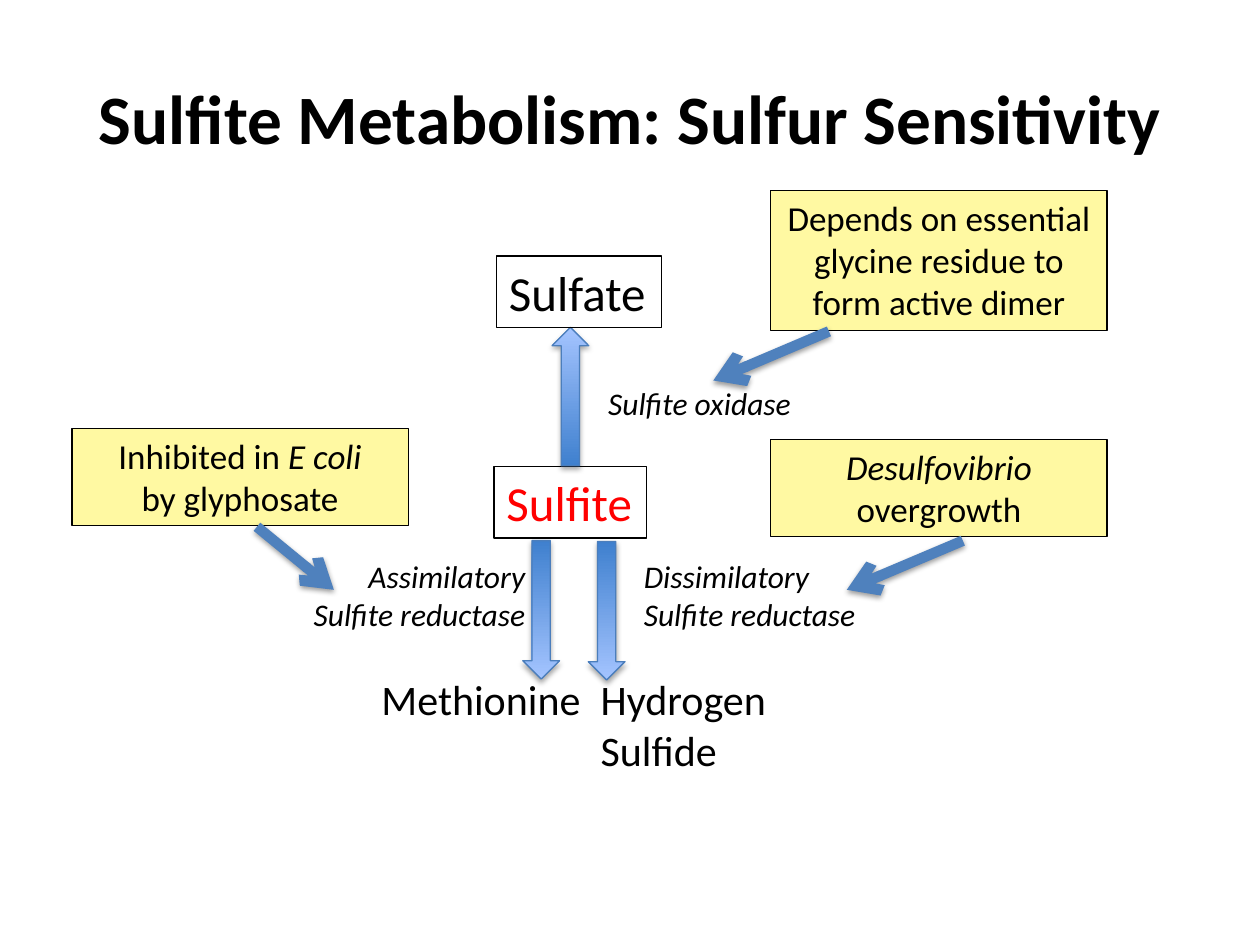
"""Build a slide on sulfite metabolism and sulfur sensitivity."""
from lxml.etree import SubElement
from pptx import Presentation
from pptx.dml.color import RGBColor
from pptx.enum.shapes import MSO_CONNECTOR, MSO_SHAPE
from pptx.enum.text import MSO_ANCHOR, MSO_AUTO_SIZE, PP_ALIGN
from pptx.oxml.ns import qn
from pptx.util import Cm, Pt

HUES = {
    "ink": "000000",
    "red": "FF0000",
    "note": "FFF9A2",
    "deep": "3F80CE",
    "pale": "A4C4FF",
    "edge": "4B7EBC",
    "link": "4F81BD",
}
LEFT, MID, RIGHT = PP_ALIGN.LEFT, PP_ALIGN.CENTER, PP_ALIGN.RIGHT
GROW = {"auto_size": MSO_AUTO_SIZE.SHAPE_TO_FIT_TEXT, "vertical_anchor": MSO_ANCHOR.TOP}
LABEL = {**GROW, "word_wrap": False}
NOTE = {**GROW, "word_wrap": True}
TITLE = {"word_wrap": True, "vertical_anchor": MSO_ANCHOR.MIDDLE}


def hue(name):
    """Return the named colour."""
    return RGBColor.from_string(HUES[name])


def apply(item, form):
    """Set each format value on an item."""
    for key, value in form.items():
        setattr(item, key, value)


def stroke(line, name, width):
    """Colour and size a line."""
    line.color.rgb = hue(name)
    line.width = Pt(width)


def shade(props, dist, alpha):
    """Add a soft shadow that falls straight down."""
    effects = SubElement(props, qn("a:effectLst"))
    outer = SubElement(effects, qn("a:outerShdw"), blurRad=str(Pt(3.1)),
                       dist=str(Pt(dist)), dir="5400000", rotWithShape="0")
    tint = SubElement(outer, qn("a:srgbClr"), val=HUES["ink"])
    SubElement(tint, qn("a:alpha"), val=str(alpha * 1000))


def write(shape, lines, size, frame, align=LEFT, color="ink", **style):
    """Fill a shape with lines, each a list of runs with their own style."""
    body = shape.text_frame
    apply(body, frame)
    for count, runs in enumerate(lines):
        para = body.add_paragraph() if count else body.paragraphs[0]
        para.alignment = align
        for text, extra in runs:
            run = para.add_run()
            run.text = text
            apply(run.font, {"name": "Calibri", "size": Pt(size), **style, **extra})
            run.font.color.rgb = hue(color)


def plain(*lines):
    """Turn each string into a line with one run."""
    return [[(line, {})] for line in lines]


def label(slide, place, lines, size, frame=LABEL, **style):
    """Add a text box without a border."""
    box = slide.shapes.add_textbox(*map(Cm, place))
    write(box, lines, size, frame, **style)


def panel(slide, place, lines, size, frame=LABEL, fill=None, **style):
    """Add a bordered box with text."""
    box = slide.shapes.add_shape(MSO_SHAPE.RECTANGLE, *map(Cm, place))
    box.shadow.inherit = False
    if fill:
        box.fill.solid()
        box.fill.fore_color.rgb = hue(fill)
    else:
        box.fill.background()
    stroke(box.line, "ink", 0.75)
    write(box, lines, size, frame, **style)


def arrow(slide, left, top, down=False):
    """Add a shaded block arrow that points up or down."""
    shape = slide.shapes.add_shape(MSO_SHAPE.UP_ARROW, Cm(left), Cm(top), Cm(0.74), Cm(2.79))
    shape.fill.gradient()
    shape.fill.gradient_angle = 90
    for stop, name, spot in zip(shape.fill.gradient_stops, ("deep", "pale"), (0, 1)):
        stop.color.rgb = hue(name)
        stop.position = spot
    stroke(shape.line, "edge", 0.75)
    props = shape._element.spPr
    shade(props, 1.8, 35)
    if down:
        props.find(qn("a:xfrm")).set("flipV", "1")


def link(slide, *ends):
    """Add a thick line with an open arrowhead."""
    line = slide.shapes.add_connector(MSO_CONNECTOR.STRAIGHT, *map(Cm, ends))
    stroke(line.line, "link", 6)
    props = line._element.spPr
    SubElement(props.find(qn("a:ln")), qn("a:tailEnd"), type="arrow")
    shade(props, 1.6, 38)


def main():
    """Build and save the slide."""
    deck = Presentation()
    apply(deck, {"slide_width": Cm(25.4), "slide_height": Cm(19.05)})
    slide = deck.slides.add_slide(deck.slide_layouts[6])

    label(slide, (1.27, 0.76, 22.86, 3.18), plain("Sulfite Metabolism: Sulfur Sensitivity"),
          39.6, TITLE, align=MID, bold=True)
    panel(slide, (9.96, 9.4, 3.07, 1.45), plain("Sulfite"), 28, color="red")
    arrow(slide, 11.86, 10.92, down=True)

    for place, lines, align in (
        ((12.01, 7.62, 4.42, 1.02), ("Sulfite oxidase",), LEFT),
        ((12.73, 11.1, 5, 1.8), ("Dissimilatory", "Sulfite reductase"), LEFT),
        ((5.84, 11.1, 5, 1.8), ("Assimilatory", "Sulfite reductase"), RIGHT),
    ):
        label(slide, place, plain(*lines), 18, align=align, italic=True)
    label(slide, (7.44, 13.46, 4.57, 1.27), plain("Methionine"), 24)
    label(slide, (11.86, 13.46, 3.91, 2.31), plain("Hydrogen", "Sulfide"), 24)

    arrow(slide, 10.54, 10.9, down=True)
    arrow(slide, 11.13, 6.6)
    panel(slide, (10.01, 5.16, 3.33, 1.45), plain("Sulfate"), 28)

    slant = {"italic": True}
    for left, top, height, lines, ends in (
        (1.45, 8.64, 1.96,
         [[("Inhibited in ", {}), ("E coli", slant)], [("by glyphosate", {})]],
         (5.18, 10.62, 6.73, 11.89)),
        (15.54, 8.86, 1.96,
         [[("Desulfovibrio", slant)], [("overgrowth", {})]],
         (19.41, 10.9, 17.07, 11.89)),
        (15.54, 3.84, 2.82,
         plain("Depends on essential glycine residue to form active dimer"),
         (16.71, 6.68, 14.38, 7.67)),
    ):
        panel(slide, (left, top, 6.78, height), lines, 20, NOTE, fill="note", align=MID)
        link(slide, *ends)

    deck.save("out.pptx")


if __name__ == "__main__":
    main()
